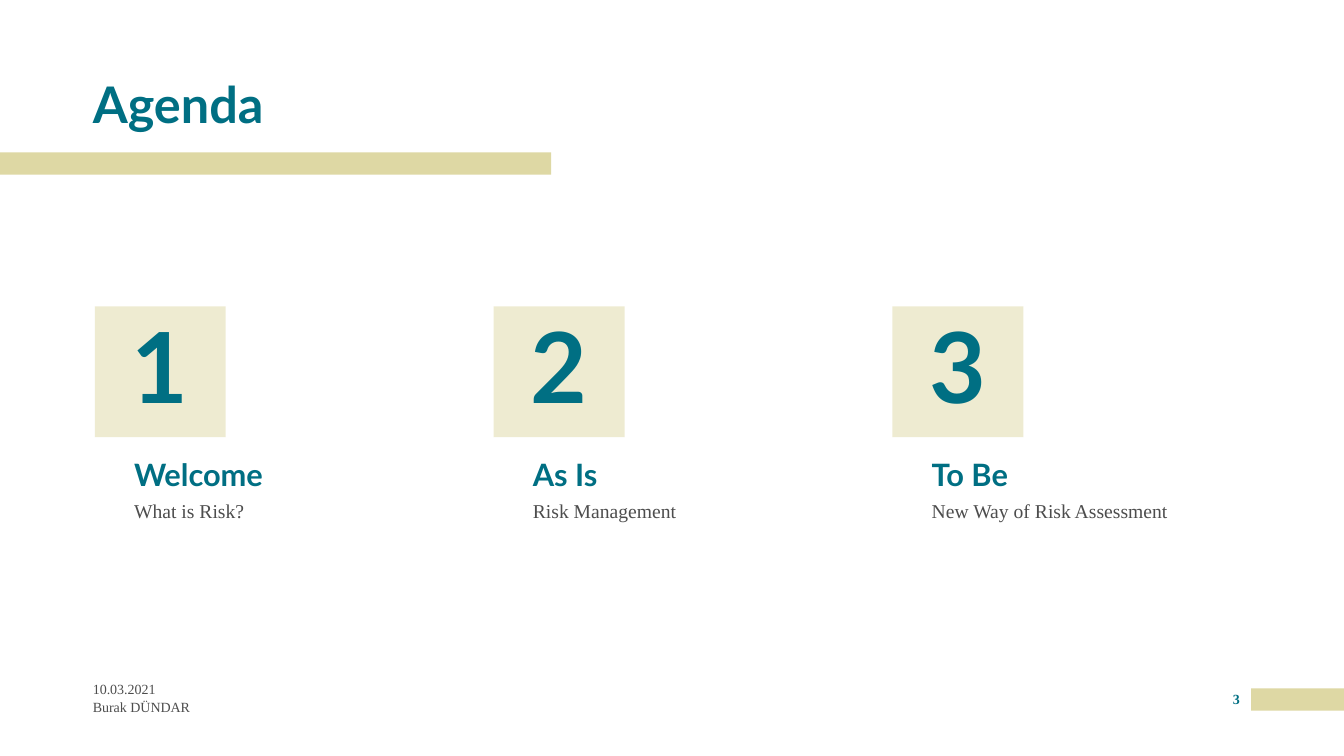
from dataclasses import dataclass

from lxml import etree
from pptx import Presentation
from pptx.dml.color import RGBColor
from pptx.enum.shapes import MSO_SHAPE
from pptx.enum.text import MSO_ANCHOR, PP_ALIGN
from pptx.oxml.ns import qn
from pptx.util import Cm, Pt

RECTANGLE = MSO_SHAPE.RECTANGLE
TOP, MIDDLE, BOTTOM = MSO_ANCHOR.TOP, MSO_ANCHOR.MIDDLE, MSO_ANCHOR.BOTTOM
LEFT, CENTER = PP_ALIGN.LEFT, PP_ALIGN.CENTER


@dataclass(frozen=True)
class TextStyle:
    font: str
    size: int
    color: RGBColor
    bold: bool = False
    line_spacing: float = 1.0
    space_before: int = 0


@dataclass(frozen=True)
class Theme:
    teal = RGBColor(0x00, 0x6F, 0x83)
    sand = RGBColor(0xDE, 0xD8, 0xA4)
    gray = RGBColor(0x4D, 0x4D, 0x4D)
    heading, body = "Lato", "Times New Roman"
    title = TextStyle(heading, 36, teal, True, 0.9)
    number = TextStyle(heading, 70, teal, True, 0.9, 10)
    topic = TextStyle(heading, 22, teal, True, 0.9, 10)
    detail = TextStyle(body, 14, gray, False, 0.9, 6)
    footer = TextStyle(body, 10, gray)
    page = TextStyle(body, 10, teal, True)


THEME = Theme()

AGENDA = [
    ("Welcome", "What is Risk?"),
    ("As Is", "Risk Management"),
    ("To Be", "New Way of Risk Assessment"),
]


def write(shape, text, style, anchor=TOP, align=LEFT):
    frame = shape.text_frame
    frame.word_wrap = True
    frame.margin_left = frame.margin_right = 0
    frame.margin_top = frame.margin_bottom = 0
    frame.vertical_anchor = anchor
    frame.text = text
    paragraph = frame.paragraphs[0]
    paragraph.alignment = align
    paragraph.line_spacing = style.line_spacing
    paragraph.space_before = Pt(style.space_before)
    font = paragraph.runs[0].font
    font.name, font.size, font.bold = style.font, Pt(style.size), style.bold
    font.color.rgb = style.color


def add_label(slide, box, text, style, anchor=TOP, align=LEFT):
    write(slide.shapes.add_textbox(*box), text, style, anchor, align)


def add_block(slide, box, opacity=100):
    """Add a sand-coloured rectangle; opacity is in percent."""
    block = slide.shapes.add_shape(RECTANGLE, *box)
    block.shadow.inherit = False
    block.line.fill.background()
    block.fill.solid()
    block.fill.fore_color.rgb = THEME.sand
    if opacity < 100:
        color = block.fill._xPr.find(f".//{qn('a:srgbClr')}")
        etree.SubElement(color, qn("a:alpha"), val=str(opacity * 1000))
    return block


def add_header(slide, left, top, width, height):
    add_block(slide, (0, top + Cm(2.11), Cm(13.89), Cm(0.56)))
    add_label(slide, (left, top, width, height), "Agenda", THEME.title, BOTTOM)


def add_agenda_item(slide, left, top, width, number, topic, detail):
    side, indent = Cm(3.3), Cm(0.99)
    square = add_block(slide, (left, top, side, side), opacity=50)
    write(square, str(number), THEME.number, MIDDLE, CENTER)
    text_left, text_width = left + indent, width - indent
    add_label(slide, (text_left, top + Cm(3.41), text_width, Cm(1.3)),
              topic, THEME.topic, BOTTOM)
    add_label(slide, (text_left, top + Cm(4.93), text_width, Cm(3.15)),
              detail, THEME.detail)


def add_agenda(slide, left, top, pitch, item_width):
    for index, (topic, detail) in enumerate(AGENDA):
        add_agenda_item(slide, left + index * pitch, top, item_width,
                        index + 1, topic, detail)


def add_footer(slide, left, top, right):
    line_height = Cm(0.64)
    add_label(slide, (left, top, Cm(7.62), line_height),
              "10.03.2021", THEME.footer, BOTTOM)
    add_label(slide, (left, top + Cm(0.66), Cm(7.62), line_height),
              "Burak DÜNDAR", THEME.footer)
    bar_width, page_width = Cm(2.34), Cm(0.74)
    bar_left = right - bar_width
    add_block(slide, (bar_left, top + Cm(0.41), bar_width, Cm(0.56)))
    add_label(slide, (bar_left - page_width, top + Cm(0.46), page_width, line_height),
              "3", THEME.page, align=CENTER)


def main():
    deck = Presentation()
    deck.slide_width, deck.slide_height = Cm(33.87), Cm(19.05)
    slide = deck.slides.add_slide(deck.slide_layouts[6])
    margin = Cm(2.34)
    add_header(slide, margin, Cm(1.73), Cm(21.67), Cm(1.65))
    add_agenda(slide, Cm(2.39), Cm(7.72), pitch=Cm(10.05), item_width=Cm(9.12))
    add_footer(slide, margin, Cm(16.94), deck.slide_width)
    deck.save("out.pptx")


if __name__ == "__main__":
    main()
